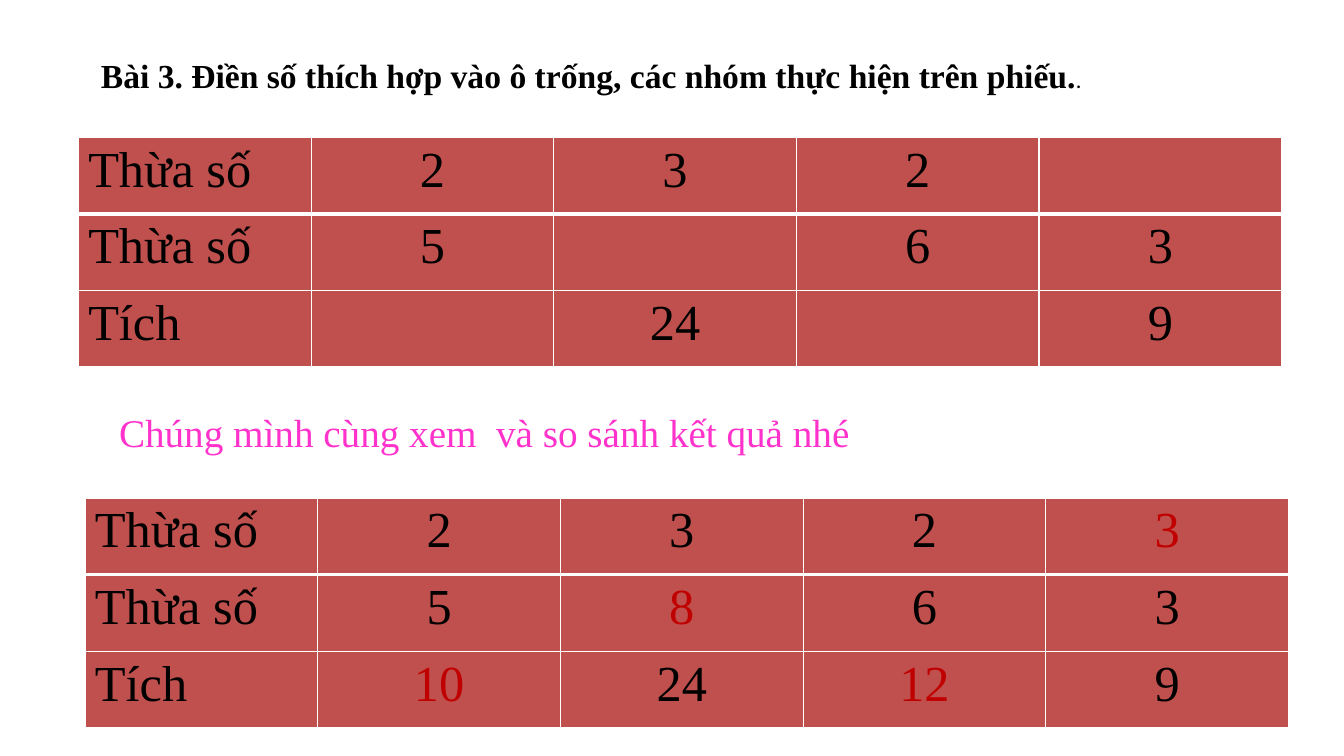
from dataclasses import dataclass

from lxml.etree import SubElement
from pptx import Presentation
from pptx.dml.color import RGBColor
from pptx.enum.text import MSO_ANCHOR as Anchor, MSO_AUTO_SIZE as AutoSize, PP_ALIGN as Align
from pptx.oxml.ns import qn
from pptx.util import Cm, Pt


@dataclass(frozen=True)
class Theme:
    serif: str = "Times New Roman"
    sans: str = "Calibri"
    ink: str = "000000"
    answer: str = "C00000"
    invite: str = "FF33CC"
    cell: str = "C0504D"
    border: str = "FFFFFF"
    heading_size: int = 24
    stop_size: int = 16
    invite_size: int = 28
    number_size: int = 36
    thin: int = 1
    thick: int = 3


THEME = Theme()
LABELS = ["Thừa số", "Thừa số", "Tích"]
PRODUCTS = [(2, 5, 10), (3, 8, 24), (2, 6, 12), (3, 3, 9)]
UNKNOWNS = {(2, 1), (1, 2), (2, 3), (0, 4)}


def style(font, size, color, name=THEME.serif, bold=False):
    font.name = name
    font.size = Pt(size)
    font.bold = bold
    font.color.rgb = RGBColor.from_string(color)


def add_heading(slide, left, top, width, height):
    heading = slide.shapes.title
    heading.left, heading.top, heading.width, heading.height = left, top, width, height
    frame = heading.text_frame
    frame.word_wrap = True
    frame.auto_size = AutoSize.NONE
    frame.vertical_anchor = Anchor.TOP
    paragraph = frame.paragraphs[0]
    paragraph.alignment = Align.LEFT
    task = paragraph.add_run()
    task.text = "Bài 3. Điền số thích hợp vào ô trống, các nhóm thực hiện trên phiếu."
    style(task.font, THEME.heading_size, THEME.ink, bold=True)
    stop = paragraph.add_run()
    stop.text = "."
    style(stop.font, THEME.stop_size, THEME.ink, THEME.sans)


def add_invitation(slide, left, top, width, height):
    frame = slide.shapes.add_textbox(left, top, width, height).text_frame
    frame.word_wrap = True
    paragraph = frame.paragraphs[0]
    paragraph.text = "Chúng mình cùng xem  và so sánh kết quả nhé"
    style(paragraph.font, THEME.invite_size, THEME.invite)


def set_borders(cell, row):
    widths = {
        "a:lnL": THEME.thin,
        "a:lnR": THEME.thin,
        "a:lnT": THEME.thick if row == 1 else THEME.thin,
        "a:lnB": THEME.thick if row == 0 else THEME.thin,
    }
    properties = cell._tc.get_or_add_tcPr()
    for position, (side, width) in enumerate(widths.items()):
        line = SubElement(properties, qn(side), w=str(Pt(width)))
        SubElement(SubElement(line, qn("a:solidFill")), qn("a:srgbClr"), val=THEME.border)
        properties.insert(position, line)


def add_products(slide, left, top, width, height, solved):
    rows, columns = len(LABELS), len(PRODUCTS) + 1
    table = slide.shapes.add_table(rows, columns, left, top, width, height).table
    table.first_row = table.horz_banding = False
    label_width = Cm(5.87)
    for index, column in enumerate(table.columns):
        column.width = label_width if index == 0 else (width - label_width) // len(PRODUCTS)
    for row, values in enumerate(zip(LABELS, *PRODUCTS)):
        for column, value in enumerate(values):
            unknown = (row, column) in UNKNOWNS
            cell = table.cell(row, column)
            cell.fill.solid()
            cell.fill.fore_color.rgb = RGBColor.from_string(THEME.cell)
            set_borders(cell, row)
            paragraph = cell.text_frame.paragraphs[0]
            if solved or not unknown:
                paragraph.text = str(value)
            paragraph.alignment = Align.CENTER if column else Align.LEFT
            style(paragraph.font, THEME.number_size, THEME.answer if unknown else THEME.ink)


def main():
    deck = Presentation()
    deck.slide_width, deck.slide_height = Cm(33.87), Cm(19.05)
    slide = deck.slides.add_slide(deck.slide_layouts[5])
    add_heading(slide, Cm(2.29), Cm(1.25), Cm(28.5), Cm(1.28))
    add_products(slide, Cm(1.97), Cm(3.46), Cm(30.33), Cm(5.79), solved=False)
    add_products(slide, Cm(2.14), Cm(12.55), Cm(30.33), Cm(5.79), solved=True)
    add_invitation(slide, Cm(2.75), Cm(10.16), Cm(21.43), Cm(1.45))
    deck.save("out.pptx")


if __name__ == "__main__":
    main()
